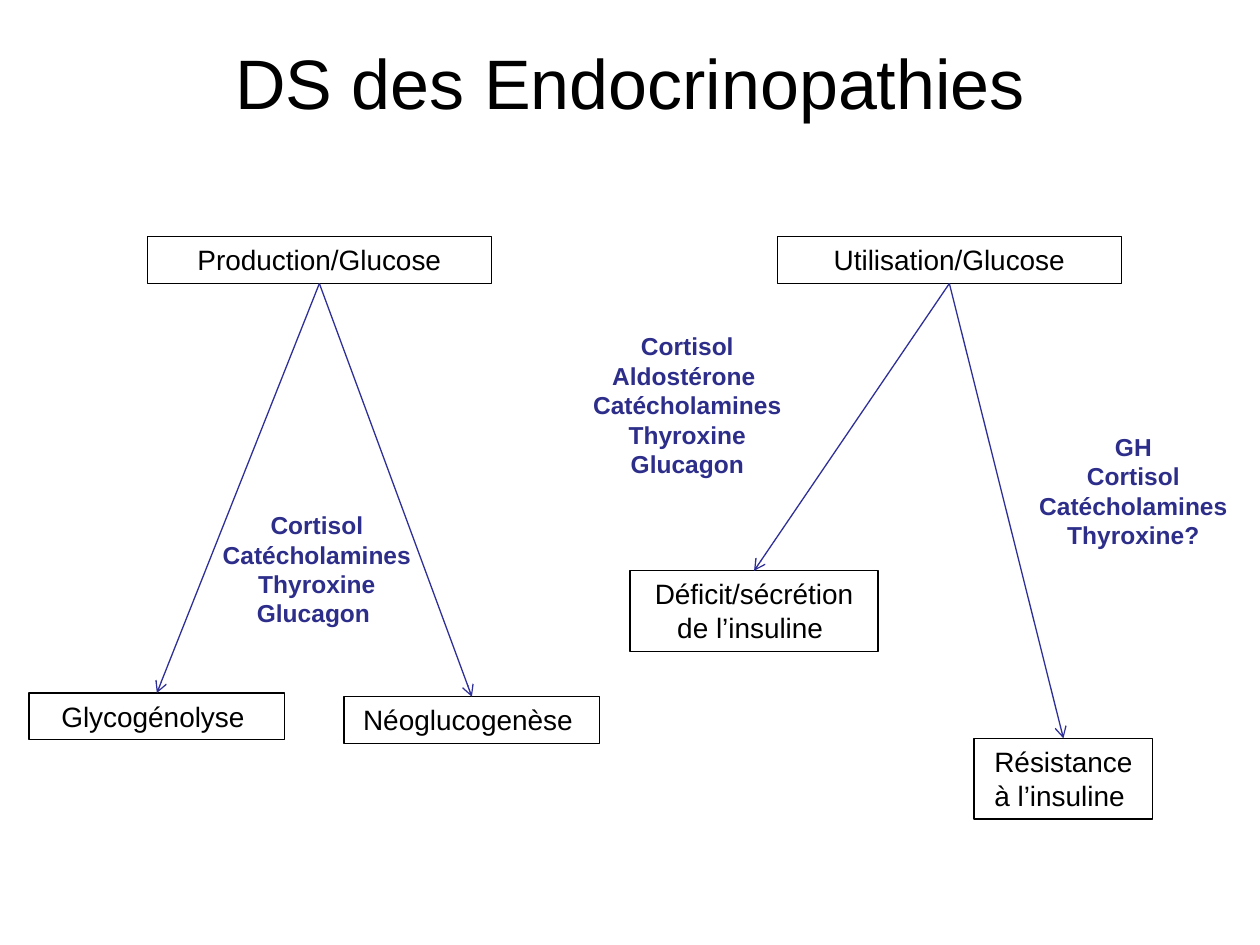
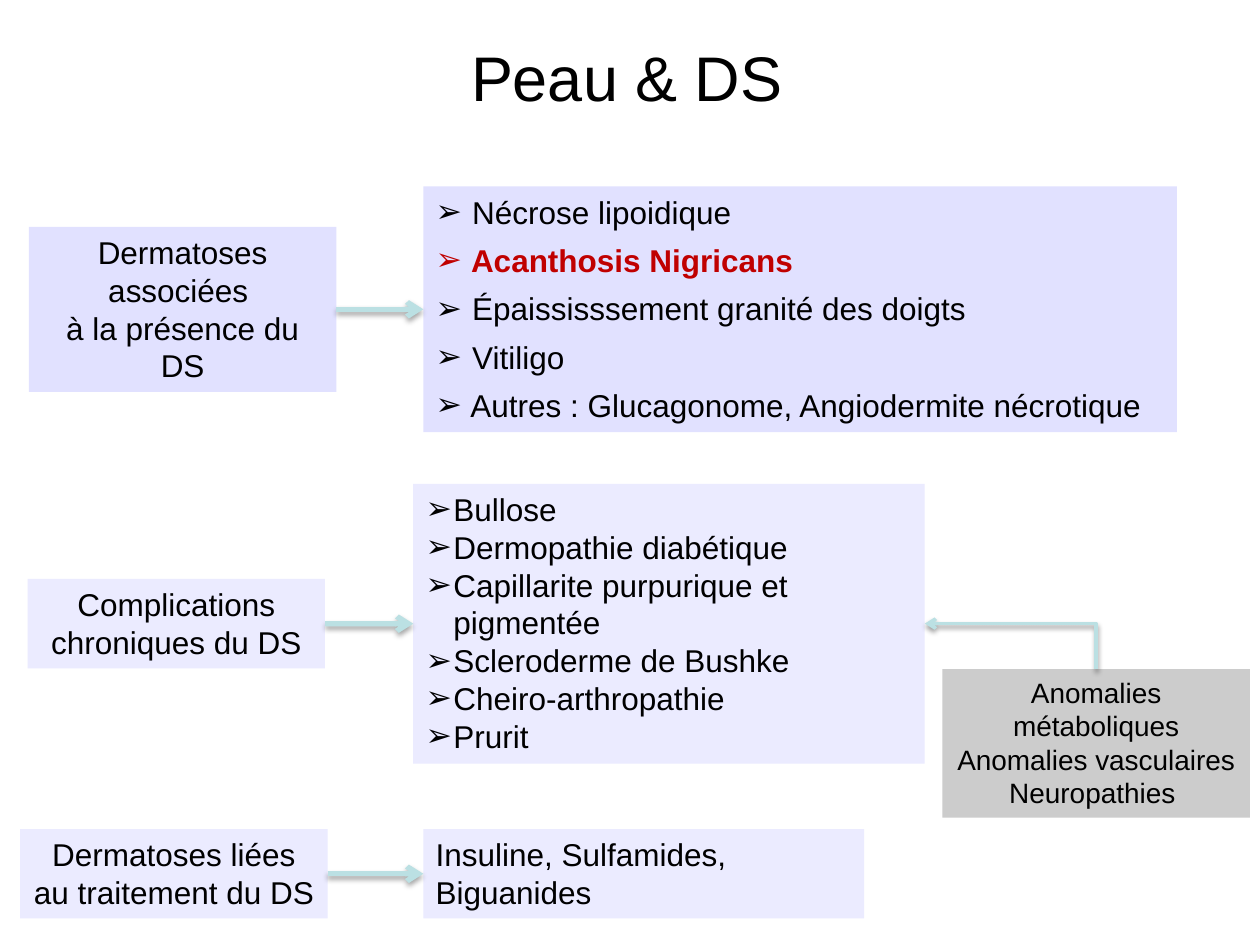
from dataclasses import dataclass

from lxml import etree
from pptx import Presentation
from pptx import util as u
from pptx.dml.color import RGBColor
from pptx.enum import shapes, text
from pptx.oxml import ns


@dataclass(frozen=True)
class Theme:
    """Colours, font and type sizes shared by the slides."""
    font: str = "Arial"
    ink: str = "000000"
    hormone: str = "2D2D8A"
    pathway: str = "2F2F98"
    alert: str = "C00000"
    lilac: str = "E1E1FF"
    pale_lilac: str = "EBEBFF"
    grey: str = "CCCCCC"
    aqua: str = "BBE0E3"
    body: int = 18
    label: int = 16
    small: int = 14


@dataclass(frozen=True)
class Box:
    """A rectangle in inches."""
    left: float
    top: float
    width: float
    height: float

    @property
    def right(self):
        """Right edge."""
        return self.left + self.width

    @property
    def bottom(self):
        """Bottom edge."""
        return self.top + self.height

    @property
    def center(self):
        """Horizontal centre."""
        return self.left + self.width / 2

    @property
    def middle(self):
        """Vertical centre."""
        return self.top + self.height / 2

    def inner(self, dx, dy, width, height):
        """Return a box placed relative to this one."""
        return Box(self.left + dx, self.top + dy, width, height)

    def lengths(self):
        """Return left, top, width and height as lengths."""
        return [u.Inches(v) for v in (self.left, self.top, self.width, self.height)]


THEME = Theme()
CENTER = text.PP_ALIGN.CENTER
LEFT = text.PP_ALIGN.LEFT


def rgb(value):
    """Turn a hex string into a colour."""
    return RGBColor.from_string(value)


def add_xml(parent, tag, **attributes):
    """Append a drawing element to its parent."""
    return etree.SubElement(parent, ns.qn(tag), attributes)


def write(shape, lines, size, color=THEME.ink, bold=False, align=CENTER):
    """Fill a shape with one paragraph per line."""
    frame = shape.text_frame
    frame.text = "\n".join(lines)
    frame.word_wrap = True
    frame.auto_size = text.MSO_AUTO_SIZE.SHAPE_TO_FIT_TEXT
    frame.vertical_anchor = text.MSO_ANCHOR.TOP
    for paragraph in frame.paragraphs:
        paragraph.alignment = align
        for run in paragraph.runs:
            run.font.name = THEME.font
            run.font.size = u.Pt(size)
            run.font.bold = bold
            run.font.color.rgb = rgb(color)


def add_title(slide, box, wording, size):
    """Place the slide title, centred in its box."""
    title = slide.shapes.add_textbox(*box.lengths())
    write(title, [wording], size)
    title.text_frame.auto_size = text.MSO_AUTO_SIZE.NONE
    title.text_frame.vertical_anchor = text.MSO_ANCHOR.MIDDLE


def add_panel(slide, box, lines, size, fill=None, align=CENTER):
    """Draw a filled panel, or an outlined one when no fill is given."""
    panel = slide.shapes.add_shape(shapes.MSO_SHAPE.RECTANGLE, *box.lengths())
    panel.shadow.inherit = False
    if fill:
        panel.fill.solid()
        panel.fill.fore_color.rgb = rgb(fill)
        panel.line.fill.background()
    else:
        panel.fill.background()
        panel.line.color.rgb = rgb(THEME.ink)
        panel.line.width = u.Pt(0.75)
    write(panel, lines, size, align=align)
    return panel


def add_bullets(panel, space_after):
    """Give each paragraph of a panel an arrowhead bullet."""
    paragraphs = panel.text_frame.paragraphs
    for paragraph in paragraphs:
        if paragraph is not paragraphs[-1]:
            paragraph.space_after = u.Pt(space_after)
        props = paragraph._p.get_or_add_pPr()
        indent = u.Inches(0.22)
        props.set("marL", str(indent))
        props.set("indent", str(-indent))
        add_xml(props, "a:buFont", typeface=THEME.font)
        add_xml(props, "a:buChar", char="➢")


def add_arrow(slide, start, end, color, width, shadow=None,
              kind=shapes.MSO_CONNECTOR.STRAIGHT):
    """Draw an open-headed arrow, with a drop shadow of the given opacity."""
    ends = [u.Inches(v) for v in (*start, *end)]
    arrow = slide.shapes.add_connector(kind, *ends)
    arrow.line.color.rgb = rgb(color)
    arrow.line.width = u.Pt(width)
    add_xml(arrow.line._get_or_add_ln(), "a:tailEnd", type="arrow")
    effects = add_xml(arrow._element.spPr, "a:effectLst")
    if shadow:
        drop = add_xml(effects, "a:outerShdw", blurRad=str(u.Pt(3.1)),
                       dist=str(u.Pt(1.8)), dir="5400000", rotWithShape="0")
        shade = add_xml(drop, "a:srgbClr", val=THEME.ink)
        add_xml(shade, "a:alpha", val=str(shadow * 1000))
    return arrow


def add_corner_arrow(slide, start, end):
    """Draw an arrow that rises from start, then runs left to end."""
    run, rise = start[0] - end[0], start[1] - end[1]
    center, middle = (start[0] + end[0]) / 2, (start[1] + end[1]) / 2
    arrow = add_arrow(slide, (center - rise / 2, middle + run / 2),
                      (center + rise / 2, middle - run / 2), THEME.aqua, 2, 38,
                      shapes.MSO_CONNECTOR.ELBOW)
    props = arrow._element.spPr
    props.find(ns.qn("a:xfrm")).set("rot", "16200000")
    props.find(ns.qn("a:prstGeom")).set("prst", "bentConnector2")


def add_pathway(slide, area, heading, heading_dx, outcomes, hormones):
    """Draw a heading, arrows to its outcomes and the hormones beside them."""
    source = area.inner(heading_dx, 0, 2.73, 0.37)
    add_panel(slide, source, [heading], THEME.label)
    for wording, *place in outcomes:
        target = area.inner(*place)
        add_panel(slide, target, [wording], THEME.label)
        add_arrow(slide, (source.center, source.bottom),
                  (target.center, target.top), THEME.pathway, 0.75)
    for names, *place in hormones:
        label = slide.shapes.add_textbox(*area.inner(*place).lengths())
        write(label, names, THEME.small, THEME.hormone, bold=True)


def add_skin_row(slide, area, cause, cause_size, details, detail_width, fill):
    """Draw a cause on the left, its details on the right and the arrow between."""
    width, height = cause_size
    origin = area.inner(0, (area.height - height) / 2, width, height)
    target = area.inner(area.width - detail_width, 0, detail_width, area.height)
    add_panel(slide, origin, cause, THEME.body, fill)
    panel = add_panel(slide, target, details, THEME.body, fill, LEFT)
    add_arrow(slide, (origin.right, origin.middle), (target.left, target.middle),
              THEME.aqua, 3, 35)
    return panel, target


def build_endocrine(slide):
    """Build the slide on endocrine disorders."""
    add_title(slide, Box(0.5, 0.18, 9, 0.94), "DS des Endocrinopathies", 40)
    add_pathway(
        slide, Box(0.23, 1.88, 4.53, 4.02), "Production/Glucose", 0.94,
        [("Glycogénolyse ", 0, 3.62, 2.03, 0.37),
         ("Néoglucogenèse ", 2.5, 3.65, 2.03, 0.37)],
        [(["Cortisol", "Catécholamines", "Thyroxine", "Glucagon "],
          1.36, 2.12, 1.85, 1.04)])
    add_pathway(
        slide, Box(4.53, 1.88, 5.39, 4.62), "Utilisation/Glucose", 1.64,
        [("Déficit/sécrétion de l’insuline ", 0.47, 2.65, 1.97, 0.64),
         ("Résistance à l’insuline ", 3.2, 3.98, 1.42, 0.64)],
        [(["Cortisol", "Aldostérone ", "Catécholamines", "Thyroxine", "Glucagon"],
          0, 0.7, 1.85, 1.28),
         (["GH", "Cortisol", "Catécholamines", "Thyroxine?"],
          3.54, 1.5, 1.85, 1.04)])


def build_skin(slide):
    """Build the slide on skin disorders."""
    add_title(slide, Box(0.23, 0.23, 9.49, 0.75), "Peau & DS", 36)
    associated, _ = add_skin_row(
        slide, Box(0.23, 1.48, 9.11, 1.95),
        ["Dermatoses associées ", "à la présence du DS"], (2.44, 1.31),
        [" Nécrose lipoidique", " Acanthosis Nigricans",
         " Épaississsement granité des doigts", " Vitiligo",
         " Autres : Glucagonome, Angiodermite nécrotique"], 5.98, THEME.lilac)
    add_bullets(associated, 6)
    acanthosis = associated.text_frame.paragraphs[1].runs[0].font
    acanthosis.bold = True
    acanthosis.color.rgb = rgb(THEME.alert)

    chronic, chronic_box = add_skin_row(
        slide, Box(0.22, 3.84, 7.12, 2.22),
        ["Complications chroniques du DS"], (2.36, 0.71),
        ["Bullose", "Dermopathie diabétique", "Capillarite purpurique et pigmentée",
         "Scleroderme de Bushke", "Cheiro-arthropathie", "Prurit"],
        4.06, THEME.pale_lilac)
    add_bullets(chronic, 0)

    add_skin_row(
        slide, Box(0.16, 6.58, 6.7, 0.71),
        ["Dermatoses liées au traitement du DS"], (2.44, 0.71),
        ["Insuline, Sulfamides, Biguanides"], 3.5, THEME.pale_lilac)

    anomalies = Box(7.48, 5.31, 2.44, 1.18)
    add_panel(slide, anomalies,
              ["Anomalies métaboliques", "Anomalies vasculaires", "Neuropathies "],
              THEME.label, THEME.grey)
    add_corner_arrow(slide, (anomalies.center, anomalies.top),
                     (chronic_box.right, chronic_box.middle))


def main():
    """Build and save the presentation."""
    deck = Presentation()
    deck.slide_width, deck.slide_height = u.Inches(10), u.Inches(7.5)
    for build in (build_endocrine, build_skin):
        build(deck.slides.add_slide(deck.slide_layouts[6]))
    deck.save("out.pptx")


if __name__ == "__main__":
    main()
